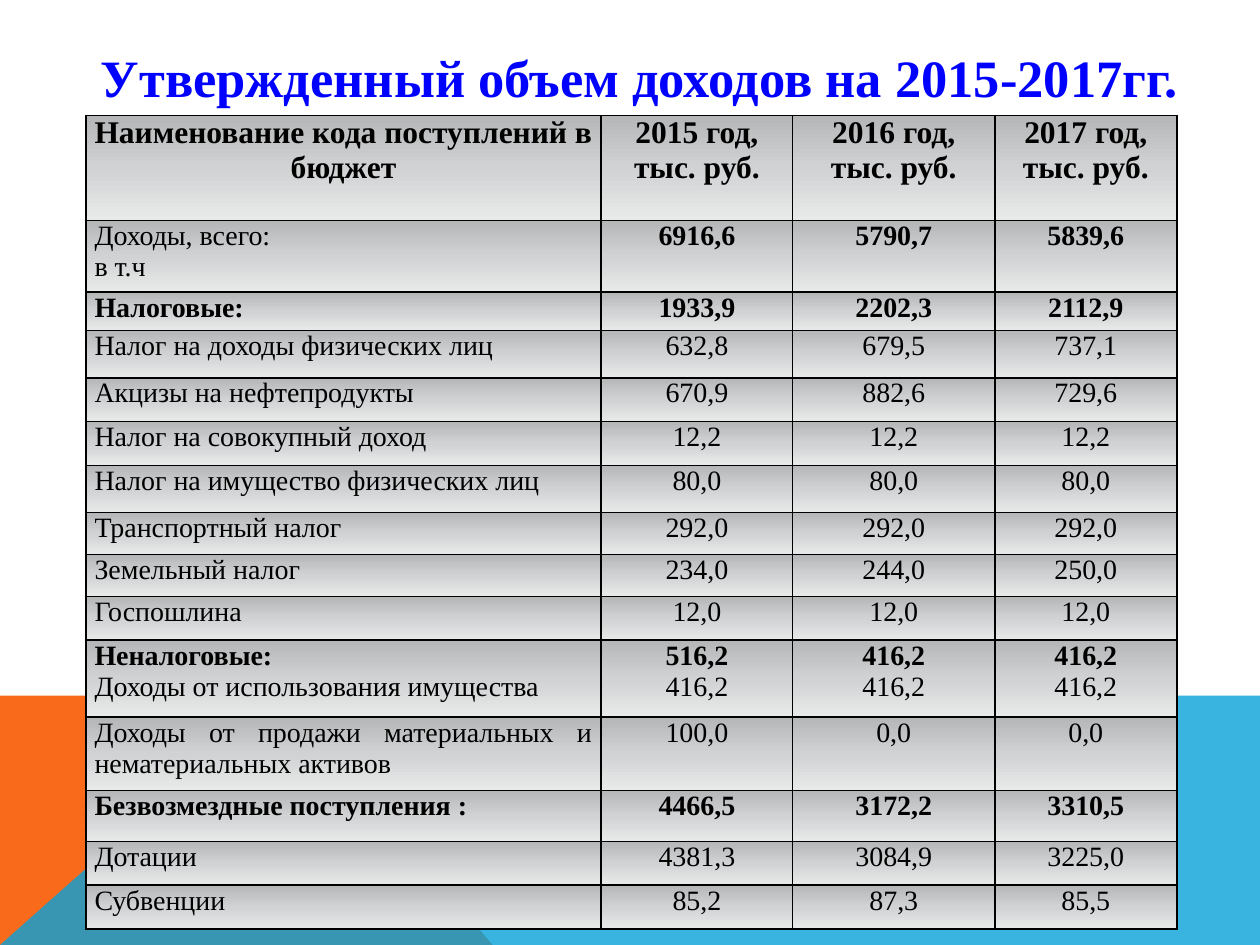
from lxml import etree
from pptx import Presentation
from pptx.dml.color import RGBColor
from pptx.enum import text
from pptx.oxml import ns
from pptx.util import Pt

FONT = "Times New Roman"
GRADIENT = [(0, "B5B6B8"), (50, "D1D2D3"), (100, "E8E9E9")]
COLUMNS = [294.5, 109.5, 115.5, 104]
ROWS = [
    (60, True, True, ["Наименование кода поступлений в бюджет", "2015 год, тыс. руб.",
                      "2016 год, тыс. руб.", "2017 год, тыс. руб."]),
    (41, False, True, ["Доходы, всего:\nв т.ч", "6916,6", "5790,7", "5839,6"]),
    (22, True, True, ["Налоговые:", "1933,9", "2202,3", "2112,9"]),
    (27, False, False, ["Налог на доходы физических лиц", "632,8", "679,5", "737,1"]),
    (25, False, False, ["Акцизы на нефтепродукты", "670,9", "882,6", "729,6"]),
    (25, False, False, ["Налог на совокупный доход", "12,2", "12,2", "12,2"]),
    (27, False, False, ["Налог на имущество физических лиц", "80,0", "80,0", "80,0"]),
    (24, False, False, ["Транспортный налог", "292,0", "292,0", "292,0"]),
    (24, False, False, ["Земельный налог", "234,0", "244,0", "250,0"]),
    (25, False, False, ["Госпошлина", "12,0", "12,0", "12,0"]),
    (44, True, True, ["Неналоговые:\nДоходы от использования имущества",
                      "516,2\n416,2", "416,2\n416,2", "416,2\n416,2"]),
    (42, False, False, ["Доходы от продажи материальных и нематериальных активов",
                        "100,0", "0,0", "0,0"]),
    (29, True, True, ["Безвозмездные поступления :", "4466,5", "3172,2", "3310,5"]),
    (25, False, False, ["Дотации", "4381,3", "3084,9", "3225,0"]),
    (25, False, False, ["Субвенции", "85,2", "87,3", "85,5"]),
]


def rgb(value):
    return RGBColor.from_string(value)


def add_element(parent, tag, **attributes):
    return etree.SubElement(parent, ns.qn(tag), attributes)


def format_paragraph(p, size, color, bold, align):
    p.alignment = align
    for r in p.runs:
        r.font.name = FONT
        r.font.size = Pt(size)
        r.font.bold = bold
        r.font.color.rgb = rgb(color)


def add_polygon(s, points, color, alpha=100):
    corners = [(Pt(x), Pt(y)) for x, y in points]
    builder = s.shapes.build_freeform(*corners[0])
    builder.add_line_segments(corners[1:], close=True)
    sp = builder.convert_to_shape()
    sp.shadow.inherit = False
    sp.line.fill.background()
    sp.fill.solid()
    sp.fill.fore_color.rgb = rgb(color)
    if alpha < 100:
        clr = sp.fill._xPr.find(".//" + ns.qn("a:srgbClr"))
        add_element(clr, "a:alpha", val=str(alpha * 1000))


def add_backdrop(s, left, top, width, height):
    right, bottom = left + width, top + height
    peak = (left + 160.5, top)
    add_polygon(s, [(left, bottom), (left, top), peak, (left + 281.5, bottom)], "F96A1B")
    add_polygon(s, [(left, bottom), peak, (right, top), (right, bottom)], "08A1D9", 80)


def add_title(s, left, top, width, height):
    sp = s.shapes.add_textbox(Pt(left), Pt(top), Pt(width), Pt(height))
    tf = sp.text_frame
    tf.text = "Утвержденный объем доходов на 2015-2017гг."
    tf.word_wrap = True
    tf.margin_left = tf.margin_right = 0
    tf.vertical_anchor = text.MSO_ANCHOR.MIDDLE
    format_paragraph(tf.paragraphs[0], 30, "0000FF", True, text.PP_ALIGN.CENTER)


def style_cell(cell):
    cell.margin_left = cell.margin_right = Pt(5)
    cell.margin_top = cell.margin_bottom = 0
    tc_pr = cell._tc.get_or_add_tcPr()
    for side in "LRTB":
        ln = add_element(tc_pr, f"a:ln{side}", w=str(Pt(1)))
        add_element(add_element(ln, "a:solidFill"), "a:srgbClr", val="000000")
    grad = add_element(tc_pr, "a:gradFill", rotWithShape="1")
    stops = add_element(grad, "a:gsLst")
    for position, color in GRADIENT:
        stop = add_element(stops, "a:gs", pos=str(position * 1000))
        add_element(stop, "a:srgbClr", val=color)
    add_element(grad, "a:lin", ang="5400000", scaled="0")


def add_income_table(s, left, top, width, height):
    frame = s.shapes.add_table(len(ROWS), len(COLUMNS), Pt(left), Pt(top), Pt(width), Pt(height))
    table = frame.table
    table.first_row = table.horz_banding = False
    for column, column_width in zip(table.columns, COLUMNS):
        column.width = Pt(column_width)
    for i, (row_height, label_bold, value_bold, values) in enumerate(ROWS):
        table.rows[i].height = Pt(row_height)
        size = 18 if i == 0 else 16
        for j, value in enumerate(values):
            cell = table.cell(i, j)
            cell.text_frame.text = value
            style_cell(cell)
            bold = value_bold if j else label_bold
            is_label = i > 0 and j == 0
            align = text.PP_ALIGN.JUSTIFY if is_label else text.PP_ALIGN.CENTER
            for k, p in enumerate(cell.text_frame.paragraphs):
                format_paragraph(p, size, "000000", bold and k == 0, align)


def main():
    prs = Presentation()
    prs.slide_width, prs.slide_height = Pt(720), Pt(540)
    s = prs.slides.add_slide(prs.slide_layouts[6])
    add_backdrop(s, 0, 397.5, 720, 142.5)
    add_title(s, 48, 21, 635, 45)
    add_income_table(s, 49, 66, sum(COLUMNS), sum(row[0] for row in ROWS))
    prs.save("out.pptx")


if __name__ == "__main__":
    main()
